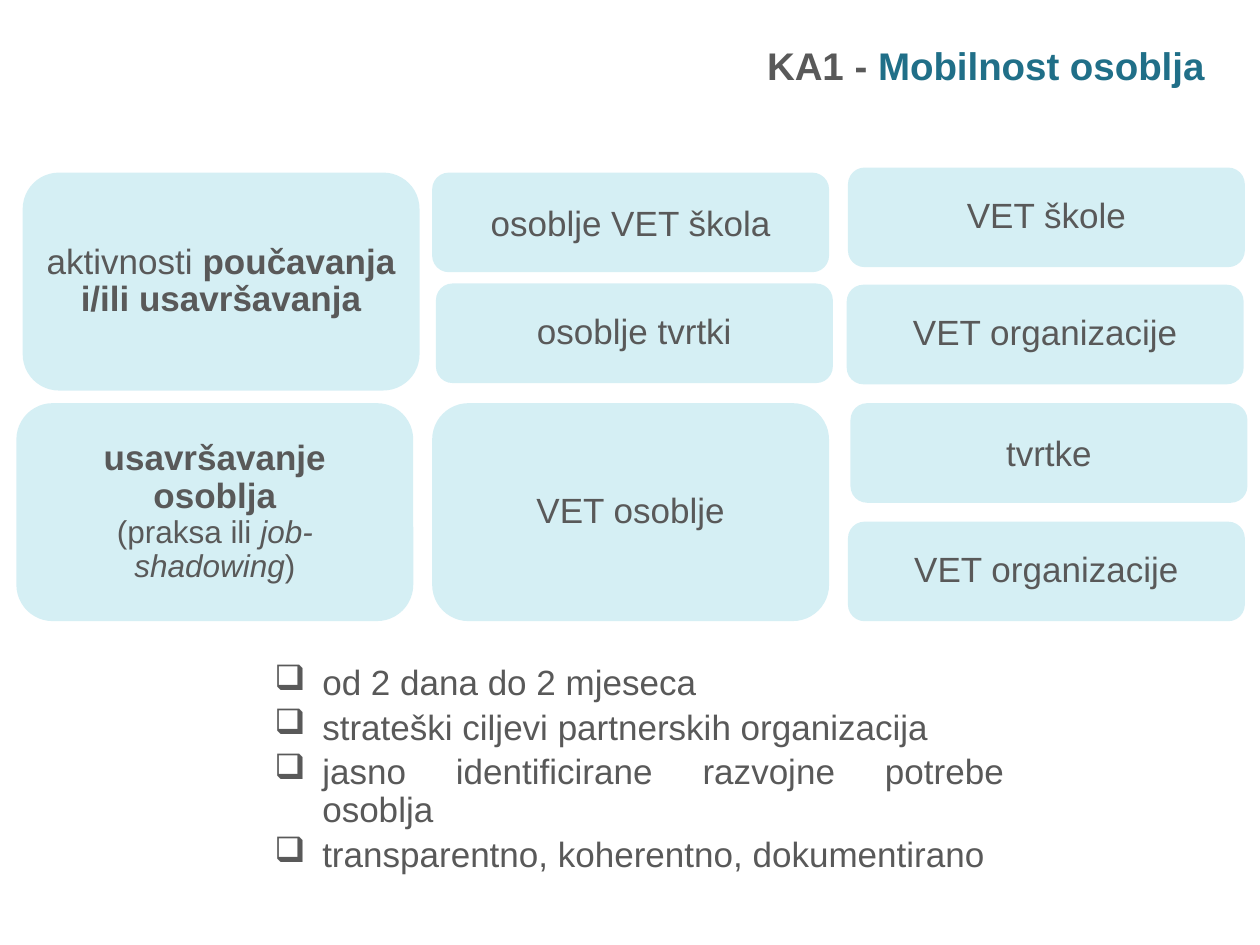
from dataclasses import dataclass

from lxml.etree import SubElement
from pptx import Presentation
from pptx.dml.color import RGBColor
from pptx.enum.shapes import MSO_SHAPE as Shape
from pptx.enum.text import MSO_ANCHOR as Anchor, MSO_AUTO_SIZE as AutoSize, PP_ALIGN as Align
from pptx.oxml.ns import qn
from pptx.util import Inches, Pt


@dataclass(frozen=True)
class Theme:
    font: str = "Arial"
    text: str = "595959"
    accent: str = "206F88"
    card: str = "2FB1CC"
    card_opacity: int = 20
    title_size: int = 22
    body_size: int = 20
    note_size: int = 18


@dataclass(frozen=True)
class Grid:
    left: float = 0.13
    top: float = 1.32
    column_step: float = 3.3
    row_step: float = 0.94
    card_width: float = 3.15
    card_height: float = 0.79

    def place(self, column, row, rows, nudge):
        """Left, top, width and height of a card that spans some rows."""
        right, down = nudge
        return (self.left + column * self.column_step + right,
                self.top + row * self.row_step + down,
                self.card_width,
                self.card_height + (rows - 1) * self.row_step)


THEME, GRID = Theme(), Grid()
BOLD, ITALIC = {"bold": True}, {"italic": True}
NOTE = {"size": Pt(THEME.note_size)}

# column, row, rows spanned, nudge off the grid, paragraphs of (text, format)
CARDS = [
    (0, 0, 2, (0.05, 0.05), [[("aktivnosti ", {}), ("poučavanja i/ili usavršavanja", BOLD)]]),
    (0, 2, 2, (0, 0), [
        [("usavršavanje osoblja", BOLD)],
        [("(praksa ili ", NOTE), ("job-shadowing", NOTE | ITALIC), (")", NOTE)],
    ]),
    (1, 2, 2, (0, 0), [[("VET osoblje", {})]]),
    (1, 0, 1, (0, 0.05), [[("osoblje VET škola", {})]]),
    (1, 1, 1, (0.03, -0.01), [[("osoblje tvrtki", {})]]),
    (2, 2, 1, (0.02, 0), [[("tvrtke", {})]]),
    (2, 3, 1, (0, 0), [[("VET organizacije", {})]]),
    (2, 0, 1, (0, 0.01), [[("VET škole", {})]]),
    (2, 1, 1, (-0.01, 0), [[("VET organizacije", {})]]),
]

POINTS = [
    "od 2 dana do 2 mjeseca",
    "strateški ciljevi partnerskih organizacija",
    "jasno identificirane razvojne potrebe osoblja",
    "transparentno, koherentno, dokumentirano",
]


def apply(target, values):
    for name, value in values.items():
        setattr(target, name, value)


def add_span(para, text, color=THEME.text, **style):
    span = para.add_run()
    span.text = text
    apply(span.font, {"name": THEME.font, "size": Pt(THEME.body_size)} | style)
    span.font.color.rgb = RGBColor.from_string(color)


def paragraphs(frame, count):
    """The first paragraph of the frame, followed by new ones."""
    return [frame.paragraphs[0]] + [frame.add_paragraph() for _ in range(count - 1)]


def add_textbox(page, place, anchor=Anchor.TOP):
    frame = page.shapes.add_textbox(*map(Inches, place)).text_frame
    apply(frame, {"word_wrap": True, "vertical_anchor": anchor,
                  "auto_size": AutoSize.SHAPE_TO_FIT_TEXT})
    return frame


def add_title(page):
    para = add_textbox(page, (2.4, 0.28, 7.26, 0.47), Anchor.BOTTOM).paragraphs[0]
    para.alignment = Align.RIGHT
    for text, color in (("KA1 - ", THEME.text), ("Mobilnost osoblja", THEME.accent)):
        add_span(para, text, color, size=Pt(THEME.title_size), bold=True)


def add_card(page, column, row, rows, nudge, content):
    place = GRID.place(column, row, rows, nudge)
    box = page.shapes.add_shape(Shape.ROUNDED_RECTANGLE, *map(Inches, place))
    box.shadow.inherit = False
    box.line.fill.background()
    box.fill.solid()
    box.fill.fore_color.rgb = RGBColor.from_string(THEME.card)
    color = box.fill._xPr.find(qn("a:solidFill"))[0]
    SubElement(color, qn("a:alpha")).set("val", str(THEME.card_opacity * 1000))
    frame = box.text_frame
    apply(frame, {"word_wrap": True, "vertical_anchor": Anchor.MIDDLE})
    spacing = 1.0 if (column, row) in ((1, 0), (2, 2)) else 0.9
    for para, spans in zip(paragraphs(frame, len(content)), content):
        apply(para, {"alignment": Align.CENTER, "line_spacing": spacing})
        for text, style in spans:
            add_span(para, text, **style)


def add_bullet(para, indent=0.46, hanging=0.38, symbol="❑"):
    properties = para._p.get_or_add_pPr()
    properties.set("marL", str(Inches(indent)))
    properties.set("indent", str(-Inches(hanging)))
    SubElement(properties, qn("a:buChar")).set("char", symbol)


def add_points(page):
    frame = add_textbox(page, (2, 5.23, 6.07, 1.46))
    for para, text in zip(paragraphs(frame, len(POINTS)), POINTS):
        add_bullet(para)
        apply(para, {"level": 1, "alignment": Align.JUSTIFY,
                     "line_spacing": 0.9, "space_after": Pt(3.9)})
        add_span(para, text)
    para.alignment = Align.LEFT


def main():
    deck = Presentation()
    apply(deck, {"slide_width": Inches(10), "slide_height": Inches(7.5)})
    page = deck.slides.add_slide(deck.slide_layouts[6])
    add_title(page)
    for card in CARDS:
        add_card(page, *card)
    add_points(page)
    deck.save("out.pptx")


if __name__ == "__main__":
    main()
